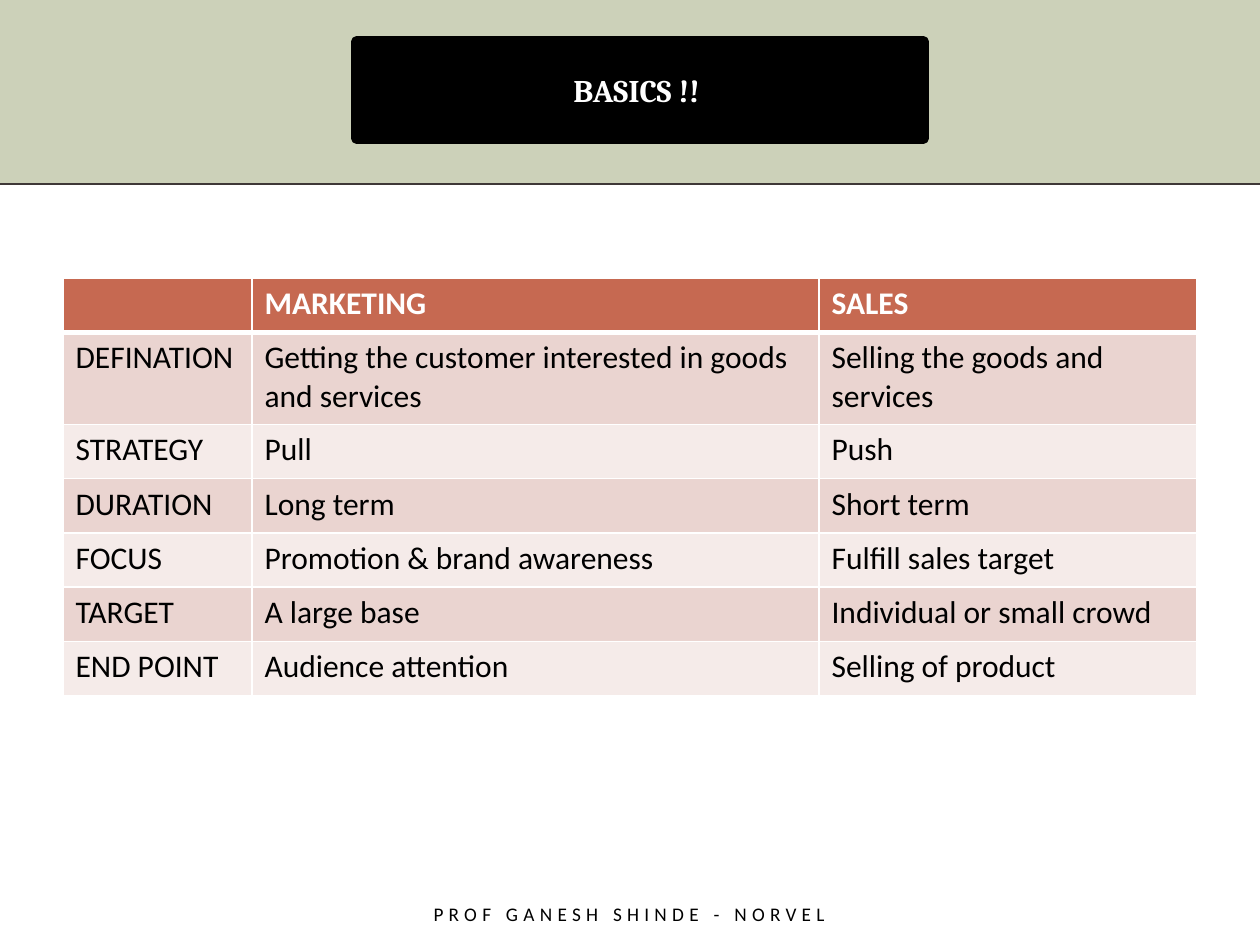
import dataclasses

import pptx
import pptx.dml.color
import pptx.enum.shapes
import pptx.enum.text
import pptx.oxml
import pptx.oxml.ns
import pptx.util
from pptx.util import Inches

HUES = {
    "sage": "CCD1B9", "white": "FFFFFF", "black": "000000", "rule": "3E3737",
    "head": "C66951", "odd": "EAD4D0", "even": "F5EBE9",
}
COLS = (1.5, 4.5, 3)
ROWS = (
    ("", "MARKETING", "SALES"),
    ("DEFINATION", "Getting the customer interested in goods and services",
     "Selling the goods and services"),
    ("STRATEGY", "Pull", "Push"),
    ("DURATION", "Long term", "Short term"),
    ("FOCUS", "Promotion & brand awareness", "Fulfill sales target"),
    ("TARGET", "A large base", "Individual or small crowd"),
    ("END POINT", "Audience attention", "Selling of product"),
)
ROW_TALL = 0.43
WRAP_TALL = 0.73
BAND = 1.46


@dataclasses.dataclass
class Type:
    face: str
    size: float
    hue: str
    bold: bool = False


@dataclasses.dataclass
class Box:
    left: float
    top: float
    width: float
    height: float

    def place(self) -> tuple:
        return tuple(map(Inches, dataclasses.astuple(self)))


def tint(name: str) -> pptx.dml.color.RGBColor:
    return pptx.dml.color.RGBColor.from_string(HUES[name])


def paint(fill, name: str) -> None:
    fill.solid()
    fill.fore_color.rgb = tint(name)


def write(frame, text: str, style: Type, center: bool = False):
    para = frame.paragraphs[0]
    para.text = text
    font = para.font
    font.name, font.bold = style.face, style.bold
    font.size = pptx.util.Pt(style.size)
    font.color.rgb = tint(style.hue)
    if center:
        frame.word_wrap = True
        frame.vertical_anchor = pptx.enum.text.MSO_ANCHOR.MIDDLE
        para.alignment = pptx.enum.text.PP_ALIGN.CENTER
    return para


def add_rect(slide, box: Box, hue: str, edge: float = 0):
    kind = pptx.enum.shapes.MSO_SHAPE.RECTANGLE
    shape = slide.shapes.add_shape(kind, *box.place())
    shape.shadow.inherit = False
    paint(shape.fill, hue)
    if edge:
        shape.line.color.rgb = tint(hue)
        shape.line.width = pptx.util.Pt(edge)
    else:
        shape.line.fill.background()
    return shape


def add_rule(slide, top: float) -> None:
    kind = pptx.enum.shapes.MSO_CONNECTOR.STRAIGHT
    line = slide.shapes.add_connector(
        kind, Inches(0), Inches(top), Inches(10), Inches(top))
    line.line.color.rgb = tint("rule")
    line.line.width = pptx.util.Pt(1)
    props = line._element.spPr
    props.append(props.makeelement(pptx.oxml.ns.qn("a:effectLst"), {}))


def edge_cell(cell, top: float, bottom: float) -> None:
    props = cell._tc.get_or_add_tcPr()
    sides = {"L": 1, "R": 1, "T": top, "B": bottom}
    for spot, (side, width) in enumerate(sides.items()):
        props.insert(spot, pptx.oxml.parse_xml(
            f'<a:ln{side} {pptx.oxml.ns.nsdecls("a")} '
            f'w="{pptx.util.Pt(width)}"><a:solidFill>'
            f'<a:srgbClr val="{HUES["white"]}"/></a:solidFill></a:ln{side}>'))


def add_grid(slide, box: Box) -> None:
    grid = slide.shapes.add_table(len(ROWS), len(COLS), *box.place()).table
    for col, width in zip(grid.columns, COLS):
        col.width = Inches(width)
    for r, texts in enumerate(ROWS):
        grid.rows[r].height = Inches(WRAP_TALL if r == 1 else ROW_TALL)
        head = r == 0
        hue = "head" if head else "odd" if r % 2 else "even"
        style = Type("Calibri", 18, "white" if head else "black", head)
        for c, text in enumerate(texts):
            cell = grid.cell(r, c)
            paint(cell.fill, hue)
            # A thick rule parts the header from the body
            edge_cell(cell, 3 if r == 1 else 1, 3 if head else 1)
            write(cell.text_frame, text, style)


def main() -> None:
    deck = pptx.Presentation()
    deck.slide_width, deck.slide_height = Inches(10), Inches(7.5)
    slide = deck.slides.add_slide(deck.slide_layouts[6])

    # Sage band above a white page
    paint(slide.background.fill, "sage")
    add_rect(slide, Box(0, BAND, 10, 7.5 - BAND), "white")
    add_rule(slide, BAND)

    # Footer with wide letter spacing
    foot = slide.shapes.add_textbox(*Box(1.58, 7.09, 6.83, 0.32).place())
    para = write(foot.text_frame, "PROF GANESH SHINDE - NORVEL",
                 Type("Calibri", 11, "black"), center=True)
    para.runs[0].font._element.set("spc", "300")

    # Title
    title = add_rect(slide, Box(2.83, 0.33, 4.5, 0.77), "black", edge=6)
    para = write(title.text_frame, "BASICS !! ",
                 Type("Cambria", 18, "white", True), center=True)
    para.space_before = pptx.util.Pt(4)

    # Comparison table
    tall = WRAP_TALL + ROW_TALL * (len(ROWS) - 1)
    add_grid(slide, Box(0.5, 2.21, sum(COLS), tall))

    deck.save("out.pptx")


if __name__ == "__main__":
    main()
